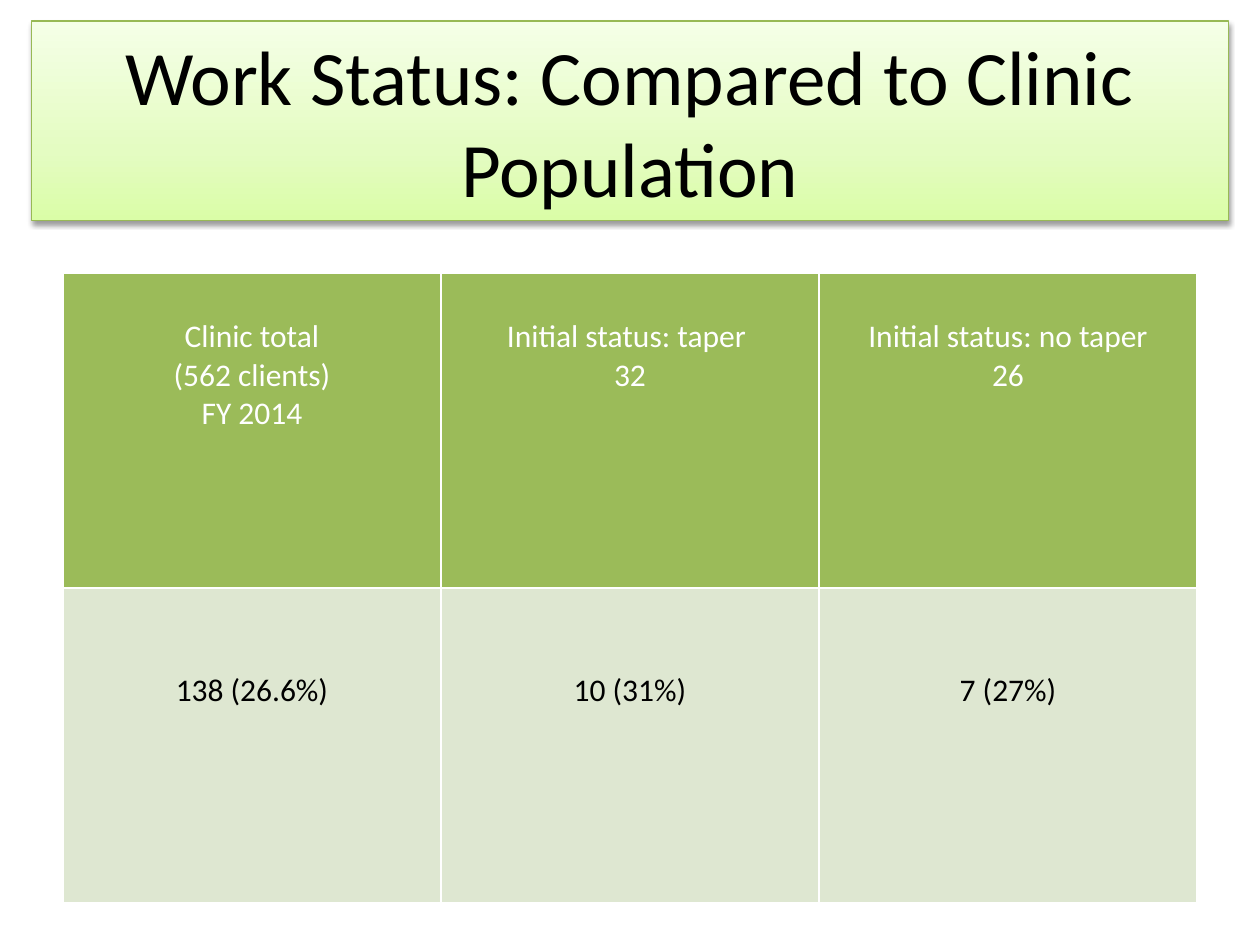
from copy import deepcopy
from lxml import etree
from pptx import Presentation
from pptx.dml.color import RGBColor
from pptx.enum import text
from pptx.oxml import ns, parse_xml
from pptx.util import Pt

WHITE = RGBColor(0xFF, 0xFF, 0xFF)
BLACK = RGBColor(0, 0, 0)
GREEN = RGBColor(0x9B, 0xBB, 0x59)
SAGE = RGBColor(0xDE, 0xE7, 0xD1)
EDGE = RGBColor(0x98, 0xB9, 0x55)
LIME = RGBColor(0xDA, 0xFD, 0xA7)
PALE = RGBColor(0xE4, 0xFC, 0xC2)
MIST = RGBColor(0xF5, 0xFF, 0xE7)

SHADOW = (
    f'<a:effectLst {ns.nsdecls("a")}>'
    '<a:outerShdw blurRad="39370" dist="20320" dir="5400000" rotWithShape="0">'
    '<a:srgbClr val="000000"><a:alpha val="38000"/></a:srgbClr>'
    '</a:outerShdw></a:effectLst>'
)


class Deck:
    """Holds the text style and the current slide."""

    def __init__(self, font="Calibri"):
        self.font = font
        self.prs = Presentation()
        self.prs.slide_width, self.prs.slide_height = Pt(720), Pt(540)
        self.slide = self.prs.slides.add_slide(self.prs.slide_layouts[5])

    def label(self, frame, words, size, color):
        frame.text = words
        for para in frame.paragraphs:
            para.alignment = text.PP_ALIGN.CENTER
            for run in para.runs:
                font = run.font
                font.name, font.size, font.bold = self.font, Pt(size), False
                font.color.rgb = color

    def title(self, words, box):
        shape = self.slide.shapes.title
        shape.left, shape.top, shape.width, shape.height = map(Pt, box)
        self.label(shape.text_frame, words, 44, BLACK)
        shape.text_frame.word_wrap = True
        shape.text_frame.auto_size = text.MSO_AUTO_SIZE.NONE
        shape.text_frame.vertical_anchor = text.MSO_ANCHOR.MIDDLE
        shape.line.color.rgb = EDGE
        shape.line.width = Pt(0.75)
        self.blend(shape.fill)
        shape._element.spPr.append(parse_xml(SHADOW))

    def blend(self, fill):
        fill.gradient()
        fill.gradient_angle = 90
        stops = fill.gradient_stops
        stops[0].color.rgb, stops[1].color.rgb = LIME, MIST
        first = stops[0]._gs
        first.addnext(deepcopy(first))
        mid = fill.gradient_stops[1]
        mid.position, mid.color.rgb = 0.35, PALE

    def border(self, cell):
        props = cell._tc.get_or_add_tcPr()
        for spot, side in enumerate(("lnL", "lnR", "lnT", "lnB")):
            line = etree.Element(ns.qn(f"a:{side}"), w=str(Pt(1)))
            fill = etree.SubElement(line, ns.qn("a:solidFill"))
            etree.SubElement(fill, ns.qn("a:srgbClr"), val=str(WHITE))
            props.insert(spot, line)

    def table(self, rows, looks, box):
        grid = self.slide.shapes.add_table(len(rows), len(rows[0]), *map(Pt, box)).table
        for r, (row, (fill, ink, top)) in enumerate(zip(rows, looks)):
            for c, words in enumerate(row):
                cell = grid.cell(r, c)
                cell.margin_top = Pt(top)
                cell.fill.solid()
                cell.fill.fore_color.rgb = fill
                self.label(cell.text_frame, words, 18, ink)
                self.border(cell)


def main():
    deck = Deck()
    deck.title("Work Status: Compared to Clinic Population", (18, 12, 684, 114))
    rows = [
        ["Clinic total\n(562 clients)\nFY 2014",
         "Initial status: taper \n32",
         "Initial status: no taper\n26"],
        ["138 (26.6%)", "10 (31%)", "7 (27%)"],
    ]
    looks = [(GREEN, WHITE, 25.6), (SAGE, BLACK, 47.6)]
    deck.table(rows, looks, (36, 156, 648, 360))
    deck.prs.save("out.pptx")


if __name__ == "__main__":
    main()
